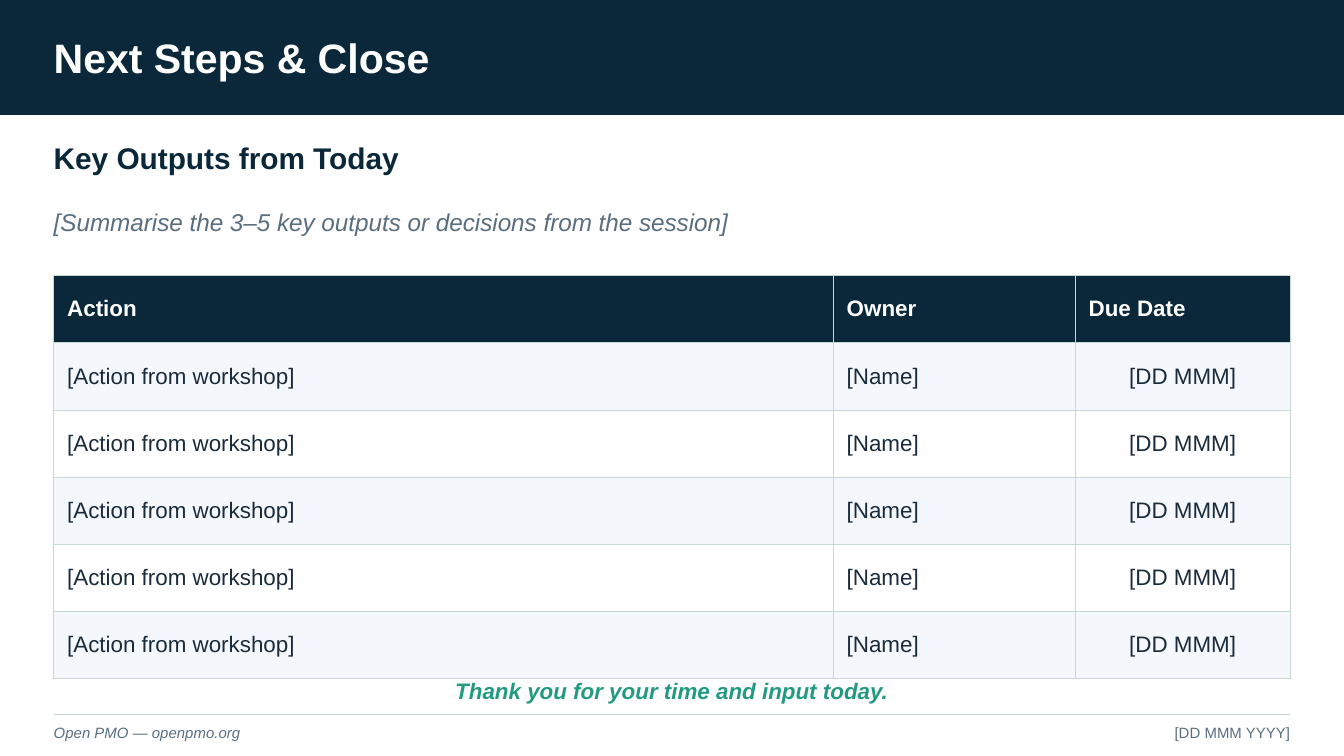
from dataclasses import dataclass

from lxml.etree import SubElement
from pptx import Presentation
from pptx.dml.color import RGBColor as RGB
from pptx.enum.shapes import MSO_CONNECTOR as Connector, MSO_SHAPE as Shape
from pptx.enum.text import MSO_ANCHOR as Anchor, PP_ALIGN as Align
from pptx.oxml.ns import qn
from pptx.util import Pt


@dataclass(frozen=True)
class Theme:
    font: str = "Arial"
    navy: str = "0B283A"
    ink: str = "1A2B3C"
    muted: str = "5A6E80"
    accent: str = "229A81"
    rule: str = "C8D8D0"
    band: str = "F4F7FB"
    white: str = "FFFFFF"
    title_size: float = 22
    heading_size: float = 16
    summary_size: float = 13
    body_size: float = 12
    footer_size: float = 8


WIDTH, HEIGHT = 720, 405
MARGIN = 28.8
CONTENT_WIDTH = WIDTH - 2 * MARGIN
HEADER_HEIGHT = 61.2
FOOTER_TOP, FOOTER_HEIGHT = 385.2, 14.4
COLUMN_WIDTHS = (417.6, 129.6, 115.2)
ROW_HEIGHT = 36
HEADINGS = ("Action", "Owner", "Due Date")
ACTIONS = [("[Action from workshop]", "[Name]", "[DD MMM]")] * 5


def write(frame, text, *, font, size, color, bold=False, italic=False, align=Align.LEFT):
    paragraph = frame.paragraphs[0]
    paragraph.alignment = align
    run = paragraph.add_run()
    run.text = text
    run.font.name = font
    run.font.size = Pt(size)
    run.font.bold = bold
    run.font.italic = italic
    run.font.color.rgb = RGB.from_string(color)


def set_borders(cell, color, width):
    """Line all four sides of a cell; the lines must precede its fill."""
    properties = cell._tc.get_or_add_tcPr()
    for position, side in enumerate(("a:lnL", "a:lnR", "a:lnT", "a:lnB")):
        line = SubElement(properties, qn(side), w=str(int(Pt(width))))
        properties.insert(position, line)
        fill = SubElement(line, qn("a:solidFill"))
        SubElement(fill, qn("a:srgbClr"), val=color)


class SlideBuilder:
    def __init__(self, slide, theme):
        self.slide = slide
        self.theme = theme

    def bar(self, left, top, width, height, color):
        bar = self.slide.shapes.add_shape(
            Shape.RECTANGLE, Pt(left), Pt(top), Pt(width), Pt(height))
        bar.shadow.inherit = False
        bar.fill.solid()
        bar.fill.fore_color.rgb = RGB.from_string(color)
        bar.line.color.rgb = RGB.from_string(color)
        bar.line.width = Pt(1)

    def text(self, text, left, top, width, height, **style):
        frame = self.slide.shapes.add_textbox(
            Pt(left), Pt(top), Pt(width), Pt(height)).text_frame
        frame.word_wrap = True
        frame.vertical_anchor = Anchor.MIDDLE
        frame.margin_left = frame.margin_right = 0
        frame.margin_top = frame.margin_bottom = 0
        write(frame, text, font=self.theme.font, **style)

    def rule(self, left, right, y):
        rule = self.slide.shapes.add_connector(
            Connector.STRAIGHT, Pt(left), Pt(y), Pt(right), Pt(y))
        rule.line.color.rgb = RGB.from_string(self.theme.rule)
        rule.line.width = Pt(0.5)
        SubElement(rule._element.spPr, qn("a:effectLst"))

    def table(self, headings, rows, left, top, column_widths, row_height):
        theme = self.theme
        content = [headings, *rows]
        table = self.slide.shapes.add_table(
            len(content), len(headings), Pt(left), Pt(top),
            Pt(sum(column_widths)), Pt(row_height * len(content))).table
        for column, width in zip(table.columns, column_widths):
            column.width = Pt(width)
        for row_index, values in enumerate(content):
            table.rows[row_index].height = Pt(row_height)
            is_heading = row_index == 0
            if is_heading:
                fill = theme.navy
            else:
                fill = theme.band if row_index % 2 else theme.white
            for column_index, value in enumerate(values):
                is_date = not is_heading and column_index == len(headings) - 1
                cell = table.cell(row_index, column_index)
                cell.vertical_anchor = Anchor.MIDDLE
                cell.fill.solid()
                cell.fill.fore_color.rgb = RGB.from_string(fill)
                set_borders(cell, theme.rule, 0.4)
                write(cell.text_frame, value, font=theme.font, size=theme.body_size,
                      color=theme.white if is_heading else theme.ink, bold=is_heading,
                      align=Align.CENTER if is_date else Align.LEFT)


def main():
    theme = Theme()
    deck = Presentation()
    deck.slide_width, deck.slide_height = Pt(WIDTH), Pt(HEIGHT)
    builder = SlideBuilder(deck.slides.add_slide(deck.slide_layouts[6]), theme)

    builder.bar(0, 0, WIDTH, HEADER_HEIGHT, theme.navy)
    builder.text("Next Steps & Close", MARGIN, 0, 576, HEADER_HEIGHT,
                 size=theme.title_size, color=theme.white, bold=True)
    builder.text("Key Outputs from Today", MARGIN, 72, CONTENT_WIDTH, 25.2,
                 size=theme.heading_size, color=theme.navy, bold=True)
    builder.text("[Summarise the 3–5 key outputs or decisions from the session]",
                 MARGIN, 100.8, CONTENT_WIDTH, 36,
                 size=theme.summary_size, color=theme.muted, italic=True)
    builder.table(HEADINGS, ACTIONS, MARGIN, 147.6, COLUMN_WIDTHS, ROW_HEIGHT)
    builder.text("Thank you for your time and input today.",
                 MARGIN, 360, CONTENT_WIDTH, 20.16, size=theme.body_size,
                 color=theme.accent, bold=True, italic=True, align=Align.CENTER)

    builder.text("Open PMO — openpmo.org", MARGIN, FOOTER_TOP, 360, FOOTER_HEIGHT,
                 size=theme.footer_size, color=theme.muted, italic=True)
    date_width = 144
    builder.text("[DD MMM YYYY]", WIDTH - MARGIN - date_width, FOOTER_TOP,
                 date_width, FOOTER_HEIGHT, size=theme.footer_size,
                 color=theme.muted, align=Align.RIGHT)
    builder.rule(MARGIN, WIDTH - MARGIN, 383.04)

    deck.save("out.pptx")


if __name__ == "__main__":
    main()
